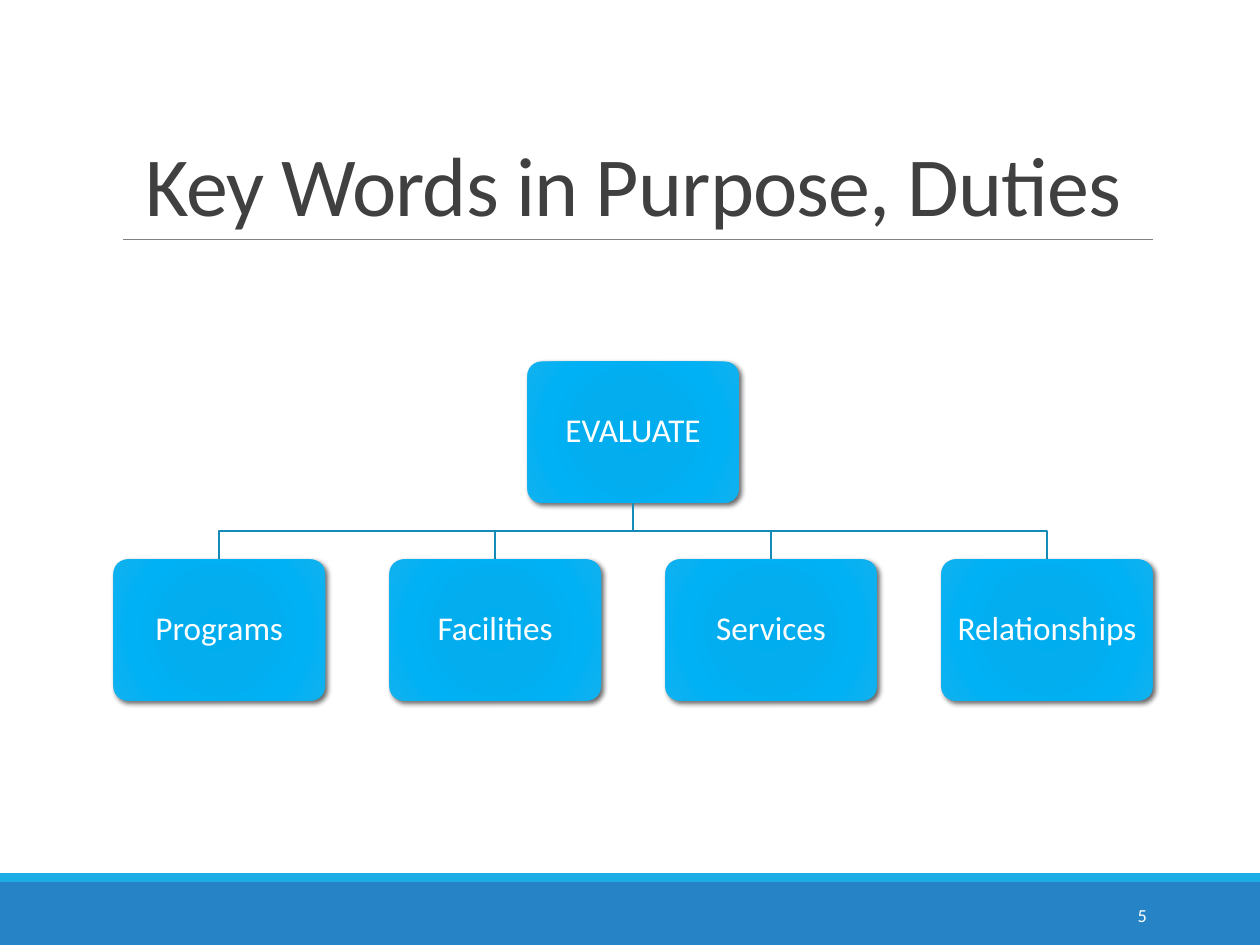
from dataclasses import dataclass

from lxml import etree
from pptx import Presentation
from pptx.dml.color import RGBColor
from pptx.enum.shapes import MSO_CONNECTOR, MSO_SHAPE
from pptx.enum.text import MSO_ANCHOR, PP_ALIGN
from pptx.oxml import parse_xml
from pptx.oxml.ns import nsdecls, qn
from pptx.util import Inches, Pt

RECTANGLE, ROUNDED = MSO_SHAPE.RECTANGLE, MSO_SHAPE.ROUNDED_RECTANGLE
STRAIGHT = MSO_CONNECTOR.STRAIGHT
MIDDLE, BOTTOM = MSO_ANCHOR.MIDDLE, MSO_ANCHOR.BOTTOM
CENTER, RIGHT = PP_ALIGN.CENTER, PP_ALIGN.RIGHT

FONT = "Calibri"
WHITE = "FFFFFF"
CARD_STOPS = ((0, "00ADEF"), (34, "03ADEE"), (70, "00B1F5"), (100, "12B1EE"))
CARD_WIDTH, CARD_HEIGHT, CARD_MARGIN = 1.68, 1.12, 0.04
CHART_LEFT, CHART_RIGHT = 0.9, 9.15
PARENT_TOP, CHILD_TOP = 2.87, 4.44
CHILDREN = ("Programs", "Facilities", "Services", "Relationships")


@dataclass(frozen=True)
class Card:
    """A labelled box of the hierarchy, placed in inches."""
    label: str
    left: float
    top: float

    @property
    def middle(self) -> float:
        """Return the horizontal centre."""
        return self.left + CARD_WIDTH / 2


@dataclass(frozen=True)
class TextStyle:
    """The look of one line of text."""
    size: float
    color: str
    align: PP_ALIGN
    anchor: MSO_ANCHOR
    line_spacing: float = 1.0
    tracking: float = 0


TITLE = TextStyle(48, "404040", CENTER, BOTTOM, 0.85, -0.5)
NUMBER = TextStyle(10.5, WHITE, RIGHT, MIDDLE)
LABEL = TextStyle(19, WHITE, CENTER, MIDDLE, 0.9)


def rgb(color: str) -> RGBColor:
    """Turn a hex string into a colour."""
    return RGBColor.from_string(color)


def write(shape, text: str, style: TextStyle) -> None:
    """Write one styled line into a shape."""
    frame = shape.text_frame
    frame.word_wrap = True
    frame.vertical_anchor = style.anchor
    para = frame.paragraphs[0]
    para.alignment = style.align
    para.line_spacing = style.line_spacing
    span = para.add_run()
    span.text = text
    span.font.name = FONT
    span.font.size = Pt(style.size)
    span.font.color.rgb = rgb(style.color)
    if style.tracking:
        span._r.get_or_add_rPr().set("spc", str(int(style.tracking * 100)))


def add_text(page, left: float, top: float, width: float, height: float,
             text: str, style: TextStyle) -> None:
    """Add a text box."""
    box = page.shapes.add_textbox(Inches(left), Inches(top), Inches(width), Inches(height))
    write(box, text, style)


def add_band(page, top: float, height: float, color: str) -> None:
    """Add a full-width footer band."""
    band = page.shapes.add_shape(RECTANGLE, Inches(0), Inches(top), Inches(10), Inches(height))
    band.shadow.inherit = False
    band.fill.solid()
    band.fill.fore_color.rgb = rgb(color)
    band.line.fill.background()


def add_rule(page, left: float, right: float, top: float) -> None:
    """Add the thin rule below the title."""
    rule = page.shapes.add_connector(STRAIGHT, Inches(left), Inches(top), Inches(right), Inches(top))
    rule.line.color.rgb = rgb("808080")
    rule.line.width = Pt(0.5)
    etree.SubElement(rule._element.spPr, qn("a:effectLst"))


def add_card(page, card: Card) -> None:
    """Add a rounded box with a radial gradient and a soft shadow."""
    box = page.shapes.add_shape(ROUNDED, Inches(card.left), Inches(card.top),
                                Inches(CARD_WIDTH), Inches(CARD_HEIGHT))
    box.adjustments[0] = 0.1
    box.fill.background()
    box.line.fill.background()
    box.shadow.inherit = False
    properties = box._element.spPr
    stops = "".join(f'<a:gs pos="{place * 1000}"><a:srgbClr val="{color}"/></a:gs>'
                    for place, color in CARD_STOPS)
    gradient = parse_xml(
        f'<a:gradFill {nsdecls("a")} rotWithShape="1"><a:gsLst>{stops}</a:gsLst>'
        '<a:path path="circle"><a:fillToRect l="100000" t="100000" r="100000" b="100000"/>'
        '</a:path></a:gradFill>')
    properties.replace(properties.find(qn("a:noFill")), gradient)
    properties.find(qn("a:effectLst")).append(parse_xml(
        f'<a:outerShdw {nsdecls("a")} blurRad="{Pt(3)}" dist="{Pt(2)}" dir="2700000" '
        'algn="ctr" rotWithShape="0"><a:srgbClr val="000000"><a:alpha val="60000"/>'
        '</a:srgbClr></a:outerShdw>'))
    frame = box.text_frame
    frame.margin_left = frame.margin_right = Inches(CARD_MARGIN)
    frame.margin_top = frame.margin_bottom = Inches(CARD_MARGIN)
    write(box, card.label, LABEL)


def add_branch(page, parent: Card, child: Card) -> None:
    """Add the stepped line from a parent to its child."""
    start = parent.top + CARD_HEIGHT
    bend = (start + child.top) / 2
    points = ((parent.middle, bend), (child.middle, bend), (child.middle, child.top))
    builder = page.shapes.build_freeform(Inches(parent.middle), Inches(start))
    builder.add_line_segments([(Inches(x), Inches(y)) for x, y in points], close=False)
    branch = builder.convert_to_shape()
    branch.shadow.inherit = False
    branch.fill.background()
    branch.line.color.rgb = rgb("168BB7")
    branch.line.width = Pt(1)


def main() -> None:
    """Build and save the slide."""
    deck = Presentation()
    deck.slide_width, deck.slide_height = Inches(10), Inches(7.5)
    page = deck.slides.add_slide(deck.slide_layouts[6])

    add_band(page, 7, 0.5, "2683C6")
    add_band(page, 6.93, 0.07, "1CADE4")
    add_rule(page, 0.98, 9.15, 1.9)
    add_text(page, 0.9, 0.31, 8.25, 1.59, "Key Words in Purpose, Duties", TITLE)
    add_text(page, 8.12, 7.06, 1.08, 0.4, "5", NUMBER)

    parent = Card("EVALUATE", (CHART_LEFT + CHART_RIGHT - CARD_WIDTH) / 2, PARENT_TOP)
    step = (CHART_RIGHT - CHART_LEFT - CARD_WIDTH) / (len(CHILDREN) - 1)
    add_card(page, parent)
    for index, label in enumerate(CHILDREN):
        child = Card(label, CHART_LEFT + index * step, CHILD_TOP)
        add_branch(page, parent, child)
        add_card(page, child)

    deck.save("out.pptx")


if __name__ == "__main__":
    main()
